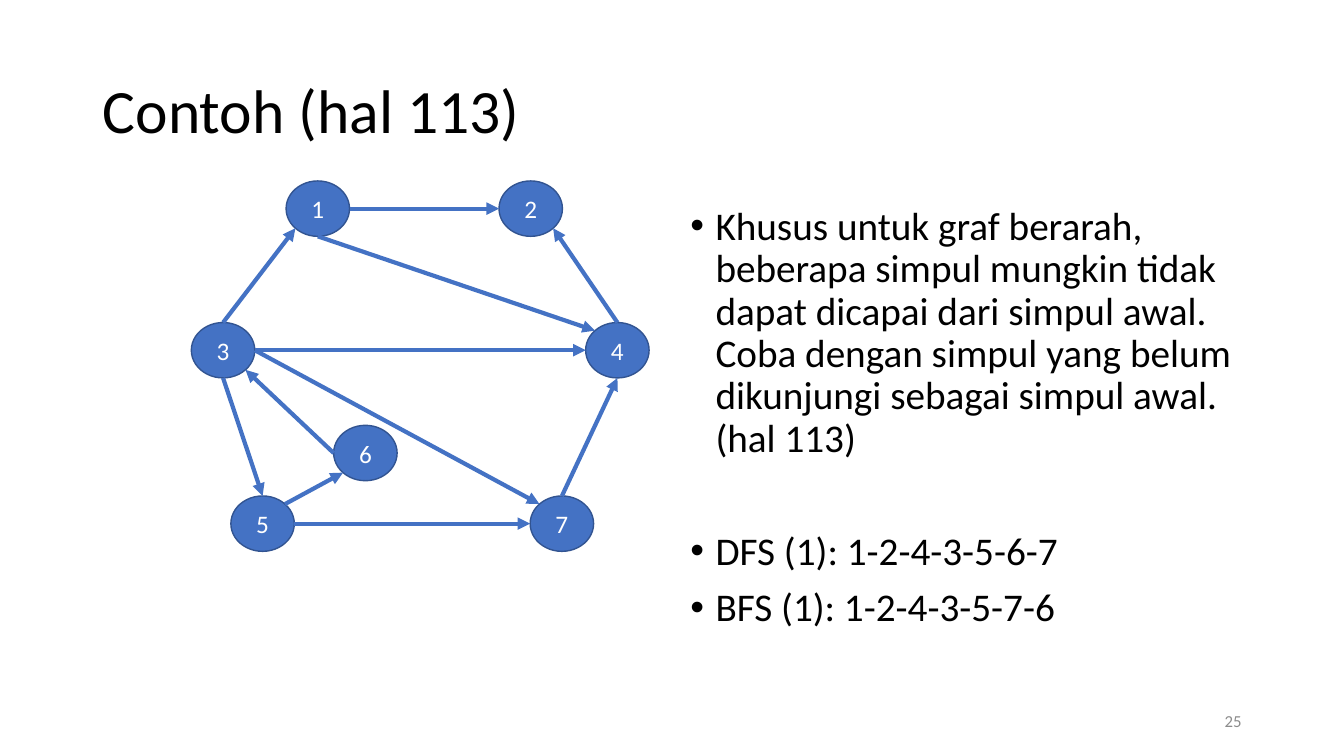
"""Build a slide showing a directed graph with its DFS and BFS orders."""
from math import sqrt
from lxml import etree
from pptx import Presentation
from pptx.dml.color import RGBColor
from pptx.enum.shapes import MSO_CONNECTOR, MSO_SHAPE
from pptx.enum.text import MSO_ANCHOR, MSO_AUTO_SIZE, PP_ALIGN
from pptx.oxml.ns import qn
from pptx.util import Inches, Pt

LEFT, CENTER, RIGHT = PP_ALIGN.LEFT, PP_ALIGN.CENTER, PP_ALIGN.RIGHT
TOP, MIDDLE = MSO_ANCHOR.TOP, MSO_ANCHOR.MIDDLE
NO_FIT = MSO_AUTO_SIZE.NONE
OVAL, STRAIGHT = MSO_SHAPE.OVAL, MSO_CONNECTOR.STRAIGHT

THEME = {
    "font": "Calibri",
    "ink": RGBColor.from_string("000000"),
    "white": RGBColor.from_string("FFFFFF"),
    "muted": RGBColor.from_string("8C8C8C"),
    "node": RGBColor.from_string("4472C4"),
    "outline": RGBColor.from_string("325491"),
    "title": 44, "body": 28, "label": 18, "small": 12,
}

prs = Presentation()
prs.slide_width, prs.slide_height = Inches(13.33), Inches(7.5)
s = prs.slides.add_slide(prs.slide_layouts[5])


def share(x, y, *size):
    """Turn percentages of the slide's width and height into lengths."""
    sides = (prs.slide_width, prs.slide_height) * 2
    return [round(v * side / 100) for v, side in zip((x, y, *size), sides)]


def write(tf, text, size="body", color="ink", align=LEFT, anchor=MIDDLE,
          spacing=1.0, before=0, bullet=False, more=False):
    """Write one formatted paragraph, the first or a further one."""
    tf.word_wrap, tf.auto_size, tf.vertical_anchor = True, NO_FIT, anchor
    p = tf.add_paragraph() if more else tf.paragraphs[0]
    if bullet:
        pPr = p._p.get_or_add_pPr()
        pPr.set("marL", str(Inches(0.25)))
        pPr.set("indent", str(-Inches(0.25)))
        etree.SubElement(pPr, qn("a:buFont")).set("typeface", "Arial")
        etree.SubElement(pPr, qn("a:buChar")).set("char", "•")
    p.alignment, p.line_spacing, p.space_before = align, spacing, Pt(before)
    r = p.add_run()
    r.text = text
    r.font.name, r.font.size = THEME["font"], Pt(THEME[size])
    r.font.color.rgb = THEME[color]


title = s.shapes.title
title.left, title.top, title.width, title.height = share(6.9, 5.33, 86.25, 19.33)
write(title.text_frame, "Contoh (hal 113)", size="title", spacing=0.9)

notes = [
    ("Khusus untuk graf berarah, beberapa simpul mungkin tidak dapat dicapai "
     "dari simpul awal. Coba dengan simpul yang belum dikunjungi sebagai "
     "simpul awal. (hal 113)", 0),
    ("DFS (1): 1-2-4-3-5-6-7", 50.5),
    ("BFS (1): 1-2-4-3-5-7-6", 10),
]
tf = s.shapes.add_textbox(*share(50.63, 26.67, 42.5, 63.47)).text_frame
for i, (text, before) in enumerate(notes):
    write(tf, text, anchor=TOP, spacing=0.9, before=before, bullet=True, more=i > 0)

NODE_W, NODE_H = 4.72, 7.33
ROW_1, ROW_2, ROW_3, ROW_4 = 27.6, 46.33, 59.93, 69.27
centers = {
    1: (23.65, ROW_1), 2: (39.49, ROW_1),
    3: (16.6, ROW_2), 4: (45.94, ROW_2),
    6: (27.19, ROW_3),
    5: (19.54, ROW_4), 7: (41.81, ROW_4),
}
D = sqrt(0.5)
rim = {"n": (0, -1), "s": (0, 1), "w": (-1, 0), "e": (1, 0),
       "nw": (-D, -D), "ne": (D, -D), "sw": (-D, D), "se": (D, D)}
edges = [
    (1, "e", 2, "w"), (3, "n", 1, "sw"), (3, "e", 4, "w"), (1, "s", 4, "nw"),
    (4, "n", 2, "se"), (3, "s", 5, "n"), (5, "ne", 6, "sw"), (6, "w", 3, "se"),
    (5, "e", 7, "w"), (3, "e", 7, "nw"), (7, "n", 4, "s"),
]

for number, (x, y) in centers.items():
    box = share(x - NODE_W / 2, y - NODE_H / 2, NODE_W, NODE_H)
    sp = s.shapes.add_shape(OVAL, *box)
    sp.shadow.inherit = False
    sp.fill.solid()
    sp.fill.fore_color.rgb = THEME["node"]
    sp.line.color.rgb, sp.line.width = THEME["outline"], Pt(1)
    write(sp.text_frame, str(number), size="label", color="white", align=CENTER)

for start, start_side, end, end_side in edges:
    ends = []
    for node, side in ((start, start_side), (end, end_side)):
        (x, y), (dx, dy) = centers[node], rim[side]
        ends += share(x + dx * NODE_W / 2, y + dy * NODE_H / 2)
    arrow = s.shapes.add_connector(STRAIGHT, *ends)
    arrow.line.color.rgb, arrow.line.width = THEME["node"], Pt(3)
    etree.SubElement(arrow.line._get_or_add_ln(), qn("a:tailEnd")).set("type", "triangle")
    etree.SubElement(arrow._element.spPr, qn("a:effectLst"))

tf = s.shapes.add_textbox(*share(70.63, 92.67, 22.5, 5.33)).text_frame
write(tf, "25", size="small", color="muted", align=RIGHT)

prs.save("out.pptx")
